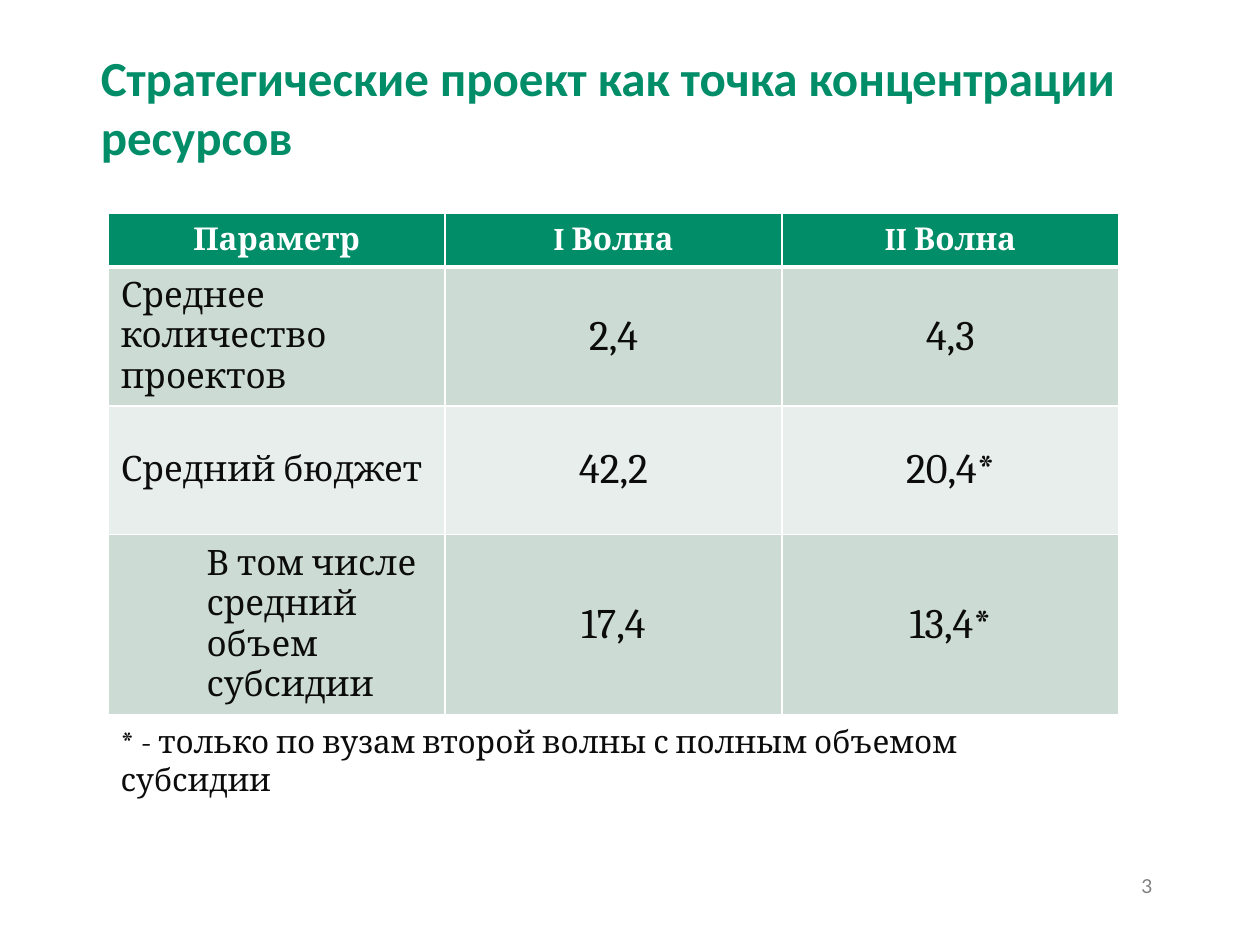
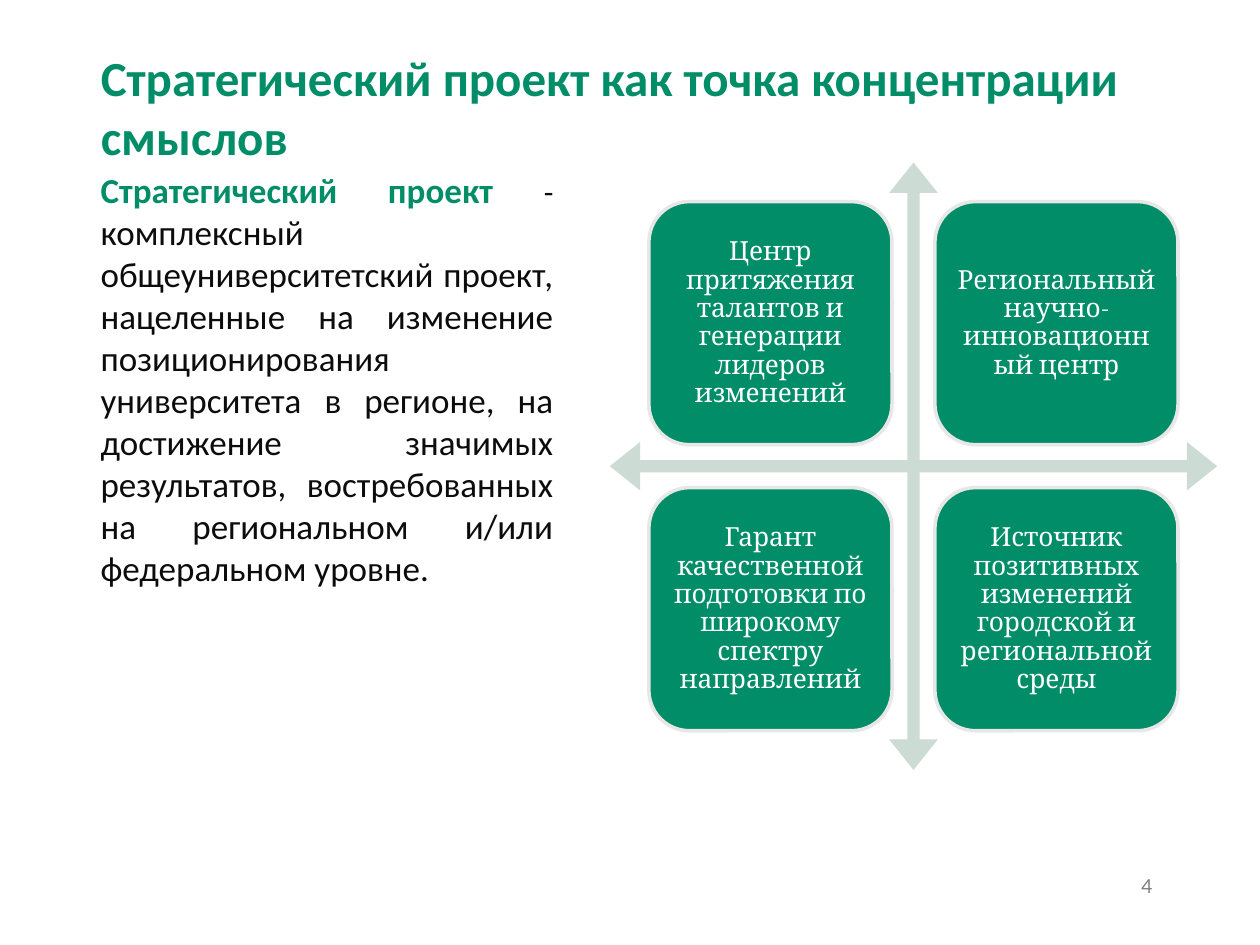
from dataclasses import dataclass

import lxml.etree
import pptx
import pptx.dml.color
import pptx.enum.shapes
import pptx.enum.text
import pptx.oxml.ns
import pptx.presentation
import pptx.shapes.base
import pptx.slide
import pptx.table
import pptx.text.text
import pptx.util

Inches = pptx.util.Inches
Pt = pptx.util.Pt
RGB = pptx.dml.color.RGBColor.from_string
qn = pptx.oxml.ns.qn
ALIGN = pptx.enum.text.PP_ALIGN
ANCHOR = pptx.enum.text.MSO_ANCHOR
PRESET = pptx.enum.shapes.MSO_SHAPE


@dataclass(frozen=True)
class Style:
    size: float
    font: str
    color: str
    bold: bool = False


@dataclass(frozen=True)
class Theme:
    green: str = "008D68"
    sage: str = "CCDBD4"
    pale: str = "E7EEEB"
    white: str = "FFFFFF"
    card_edge: str = "E7E7E7"
    title: Style = Style(28, "Calibri", "008D68", True)
    number: Style = Style(11, "Lato", "808080")
    header: Style = Style(18, "Cambria", "FFFFFF", True)
    label: Style = Style(20, "Cambria", "0C0C0C")
    value: Style = Style(24, "Cambria", "0C0C0C")
    footnote: Style = Style(18, "Cambria", "0C0C0C")
    term: Style = Style(20, "Calibri", "008D68", True)
    dash: Style = Style(18, "Calibri", "0C0C0C")
    definition: Style = Style(20, "Calibri", "0C0C0C")
    card: Style = Style(15, "Cambria", "FFFFFF")


@dataclass(frozen=True)
class Box:
    left: float
    top: float
    width: float
    height: float

    def emu(self) -> tuple:
        return tuple(Inches(v) for v in (self.left, self.top, self.width, self.height))


@dataclass(frozen=True)
class Parameter:
    name: str
    first_wave: str
    second_wave: str
    indent: float = 0


@dataclass(frozen=True)
class Quadrant:
    column: int
    row: int
    role: str


THEME = Theme()
TITLE_BOX = Box(0.7, 0.3, 8.59, 0.54)
NUMBER_BOX = Box(8.96, 6.89, 0.43, 0.28)

WAVE_HEADINGS = ("Параметр", "I Волна", "II Волна")
PARAMETERS = (
    Parameter("Среднее количество проектов", "2,4", "4,3"),
    Parameter("Средний бюджет", "42,2", "20,4*"),
    Parameter("В том числе средний объем субсидии", "17,4", "13,4*", indent=0.68),
)
TABLE_BOX = Box(0.86, 1.69, 8.02, 3.49)
HEADER_HEIGHT = 0.43

QUADRANTS = (
    Quadrant(0, 0, "Центр притяжения талантов и генерации лидеров изменений"),
    Quadrant(1, 0, "Региональный научно-инновационный центр"),
    Quadrant(0, 1, "Гарант качественной подготовки по широкому спектру направлений"),
    Quadrant(1, 1, "Источник позитивных изменений городской и региональной среды"),
)
CROSS_BOX = Box(4.84, 1.29, 4.82, 4.82)
CARD_SIDE = 1.93
CARD_GAP = 0.34


def add_run(paragraph: pptx.text.text._Paragraph, text: str, style: Style) -> None:
    run = paragraph.add_run()
    run.text = text
    run.font.size = Pt(style.size)
    run.font.name = style.font
    run.font.bold = style.bold
    run.font.color.rgb = RGB(style.color)


def add_text(slide: pptx.slide.Slide, box: Box, *pieces: tuple[str, Style],
             align: ALIGN = ALIGN.LEFT, anchor: ANCHOR = ANCHOR.TOP) -> None:
    frame = slide.shapes.add_textbox(*box.emu()).text_frame
    frame.word_wrap = True
    frame.vertical_anchor = anchor
    paragraph = frame.paragraphs[0]
    paragraph.alignment = align
    for text, style in pieces:
        add_run(paragraph, text, style)


def add_titled_slide(deck: pptx.presentation.Presentation, heading: str,
                     number: int) -> pptx.slide.Slide:
    slide = deck.slides.add_slide(deck.slide_layouts[5])
    title = slide.shapes.title
    title.left, title.top, title.width, title.height = TITLE_BOX.emu()
    frame = title.text_frame
    frame.auto_size = pptx.enum.text.MSO_AUTO_SIZE.NONE
    frame.vertical_anchor = ANCHOR.TOP
    frame.margin_top = Inches(0.08)
    frame.paragraphs[0].alignment = ALIGN.LEFT
    add_run(frame.paragraphs[0], heading, THEME.title)
    add_text(slide, NUMBER_BOX, (str(number), THEME.number), anchor=ANCHOR.MIDDLE)
    return slide


def add_cell_border(cell: pptx.table._Cell, side: str, points: float) -> None:
    line = lxml.etree.SubElement(cell._tc.get_or_add_tcPr(), qn(f"a:ln{side}"),
                                 w=str(Pt(points)))
    fill = lxml.etree.SubElement(line, qn("a:solidFill"))
    lxml.etree.SubElement(fill, qn("a:srgbClr"), val=THEME.white)


def fill_cell(cell: pptx.table._Cell, row: int, text: str, style: Style,
              align: ALIGN, fill: str, indent: float = 0) -> None:
    """Write one cell; a thick rule separates row 0 from row 1."""
    cell.vertical_anchor = ANCHOR.MIDDLE
    paragraph = cell.text_frame.paragraphs[0]
    paragraph.alignment = align
    if indent:
        paragraph._p.get_or_add_pPr().set("marL", str(Inches(indent)))
    add_run(paragraph, text, style)
    for side in "LRTB":
        thick = (row, side) in ((0, "B"), (1, "T"))
        add_cell_border(cell, side, 3 if thick else 1)
    cell.fill.solid()
    cell.fill.fore_color.rgb = RGB(fill)


def add_wave_table(slide: pptx.slide.Slide) -> None:
    table = slide.shapes.add_table(len(PARAMETERS) + 1, len(WAVE_HEADINGS),
                                   *TABLE_BOX.emu()).table
    for column in table.columns:
        column.width = Inches(TABLE_BOX.width / len(WAVE_HEADINGS))
    table.rows[0].height = Inches(HEADER_HEIGHT)
    for column, heading in enumerate(WAVE_HEADINGS):
        fill_cell(table.cell(0, column), 0, heading, THEME.header, ALIGN.CENTER, THEME.green)
    for row, parameter in enumerate(PARAMETERS, start=1):
        table.rows[row].height = Inches((TABLE_BOX.height - HEADER_HEIGHT) / len(PARAMETERS))
        fill = THEME.sage if row % 2 else THEME.pale
        fill_cell(table.cell(row, 0), row, parameter.name, THEME.label, ALIGN.LEFT,
                  fill, parameter.indent)
        for column, value in enumerate((parameter.first_wave, parameter.second_wave), start=1):
            fill_cell(table.cell(row, column), row, value, THEME.value, ALIGN.CENTER, fill)


def add_filled_shape(slide: pptx.slide.Slide, preset: PRESET, box: Box,
                     fill: str) -> pptx.shapes.base.BaseShape:
    shape = slide.shapes.add_shape(preset, *box.emu())
    shape.shadow.inherit = False
    shape.fill.solid()
    shape.fill.fore_color.rgb = RGB(fill)
    shape.line.fill.background()
    return shape


def add_cross(slide: pptx.slide.Slide) -> None:
    cross = add_filled_shape(slide, PRESET.QUAD_ARROW, CROSS_BOX, THEME.sage)
    for index, ratio in enumerate((0.02, 0.04, 0.05)):
        cross.adjustments[index] = ratio


def add_quadrant(slide: pptx.slide.Slide, quadrant: Quadrant) -> None:
    """Place a card beside the centre of the cross."""
    step = CARD_SIDE + CARD_GAP
    margin = (CROSS_BOX.width - step - CARD_SIDE) / 2
    box = Box(CROSS_BOX.left + margin + quadrant.column * step,
              CROSS_BOX.top + margin + quadrant.row * step, CARD_SIDE, CARD_SIDE)
    card = add_filled_shape(slide, PRESET.ROUNDED_RECTANGLE, box, THEME.green)
    card.line.color.rgb = RGB(THEME.card_edge)
    card.line.width = Pt(2)
    frame = card.text_frame
    frame.word_wrap = True
    frame.vertical_anchor = ANCHOR.MIDDLE
    frame.margin_left = frame.margin_right = Inches(0.06)
    frame.margin_top = frame.margin_bottom = Inches(0.06)
    paragraph = frame.paragraphs[0]
    paragraph.alignment = ALIGN.CENTER
    paragraph.line_spacing = 0.9
    add_run(paragraph, quadrant.role, THEME.card)


def build_resources_slide(deck: pptx.presentation.Presentation) -> None:
    slide = add_titled_slide(deck, "Стратегические проект как точка концентрации ресурсов", 3)
    add_wave_table(slide)
    add_text(slide, Box(0.86, 5.68, 8.02, 0.4),
             ("* - только по вузам второй волны с полным объемом субсидии", THEME.footnote))


def build_meanings_slide(deck: pptx.presentation.Presentation) -> None:
    slide = add_titled_slide(deck, "Стратегический проект как точка концентрации смыслов", 4)
    add_text(slide, Box(0.7, 1.29, 3.79, 4.82),
             ("Стратегический проект ", THEME.term),
             ("- ", THEME.dash),
             ("комплексный общеуниверситетский проект, нацеленные на изменение "
              "позиционирования университета в регионе, на достижение значимых "
              "результатов, востребованных на региональном и/или федеральном уровне.",
              THEME.definition),
             align=ALIGN.JUSTIFY)
    add_cross(slide)
    for quadrant in QUADRANTS:
        add_quadrant(slide, quadrant)


def main() -> None:
    deck = pptx.Presentation()
    deck.slide_width, deck.slide_height = Inches(10), Inches(7.5)
    build_resources_slide(deck)
    build_meanings_slide(deck)
    deck.save("out.pptx")


if __name__ == "__main__":
    main()
